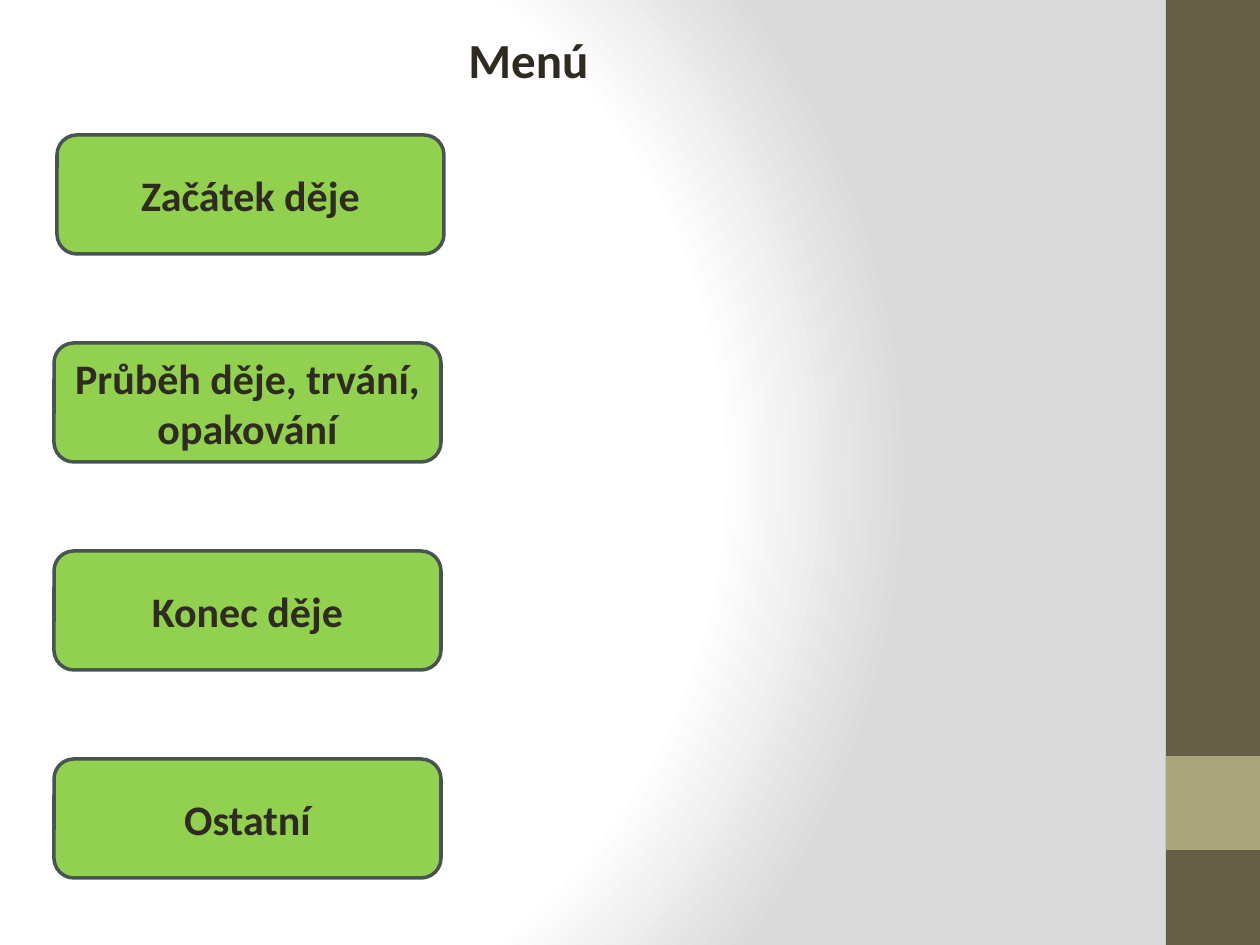
from dataclasses import dataclass

from lxml import etree
from pptx import Presentation
from pptx import util as u
from pptx.dml.color import RGBColor
from pptx.enum import shapes, text
from pptx.oxml import ns

SCALE = 914400 / 126


@dataclass(frozen=True)
class Theme:
    font: str = "Calibri"
    ink: str = "2F2B20"
    edge: str = "48544F"
    green: str = "92D050"
    brown: str = "675E47"
    khaki: str = "A9A57C"
    white: str = "FFFFFF"
    gray: str = "DADADA"
    title: int = 28
    label: int = 24


def px(*sizes):
    return [u.Emu(round(size * SCALE)) for size in sizes]


def write(frame, words, font, size, color, bold=True, align=text.PP_ALIGN.LEFT):
    frame.word_wrap = True
    para = frame.paragraphs[0]
    para.alignment = align
    run = para.add_run()
    run.text = words
    run.font.name = font
    run.font.size = u.Pt(size)
    run.font.bold = bold
    run.font.color.rgb = RGBColor.from_string(color)


class Page:
    def __init__(self, deck, theme):
        self.theme = theme
        self.slide = deck.slides.add_slide(deck.slide_layouts[6])

    def glow(self, stops):
        fill = self.slide.background.fill
        fill.solid()
        frame = self.slide.element.find(".//" + ns.qn("p:bgPr"))
        marks = "".join(
            f'<a:gs pos="{at * 1000}"><a:srgbClr val="{color}"/></a:gs>'
            for at, color in stops
        )
        grad = etree.fromstring(
            f'<a:gradFill {ns.nsdecls("a")} rotWithShape="1"><a:gsLst>{marks}</a:gsLst>'
            '<a:path path="circle">'
            '<a:fillToRect l="20000" t="50000" r="100000" b="50000"/>'
            "</a:path></a:gradFill>"
        )
        frame.replace(frame.find(ns.qn("a:solidFill")), grad)

    def shape(self, kind, box, fill):
        item = self.slide.shapes.add_shape(kind, *px(*box))
        item.shadow.inherit = False
        item.fill.solid()
        item.fill.fore_color.rgb = RGBColor.from_string(fill)
        return item

    def band(self, box, fill):
        item = self.shape(shapes.MSO_SHAPE.RECTANGLE, box, fill)
        item.line.fill.background()

    def button(self, box, words):
        look = self.theme
        item = self.shape(shapes.MSO_SHAPE.ROUNDED_RECTANGLE, box, look.green)
        item.line.color.rgb = RGBColor.from_string(look.edge)
        item.line.width = u.Pt(2)
        item.text_frame.vertical_anchor = text.MSO_ANCHOR.MIDDLE
        write(item.text_frame, words, font=look.font, size=look.label,
              color=look.ink, align=text.PP_ALIGN.CENTER)

    def title(self, box, words):
        look = self.theme
        item = self.slide.shapes.add_textbox(*px(*box))
        item.text_frame.auto_size = text.MSO_AUTO_SIZE.SHAPE_TO_FIT_TEXT
        write(item.text_frame, words, font=look.font, size=look.title,
              color=look.ink)


def main():
    deck = Presentation()
    deck.slide_width, deck.slide_height = px(1260, 945)
    theme = Theme()
    page = Page(deck, theme)
    page.glow([(0, theme.white), (75, theme.white), (100, theme.gray)])
    page.band((1166, 0, 94, 945), theme.brown)
    page.band((1166, 756, 94, 94), theme.khaki)
    labels = ["Začátek děje", "Průběh děje, trvání, opakování",
              "Konec děje", "Ostatní"]
    for row, label in enumerate(labels):
        left = 54 if row else 57
        page.button((left, 135 + 208 * row, 387, 119), label)
    page.title((456, 23, 321, 72), "Menú")
    deck.save("out.pptx")


if __name__ == "__main__":
    main()
